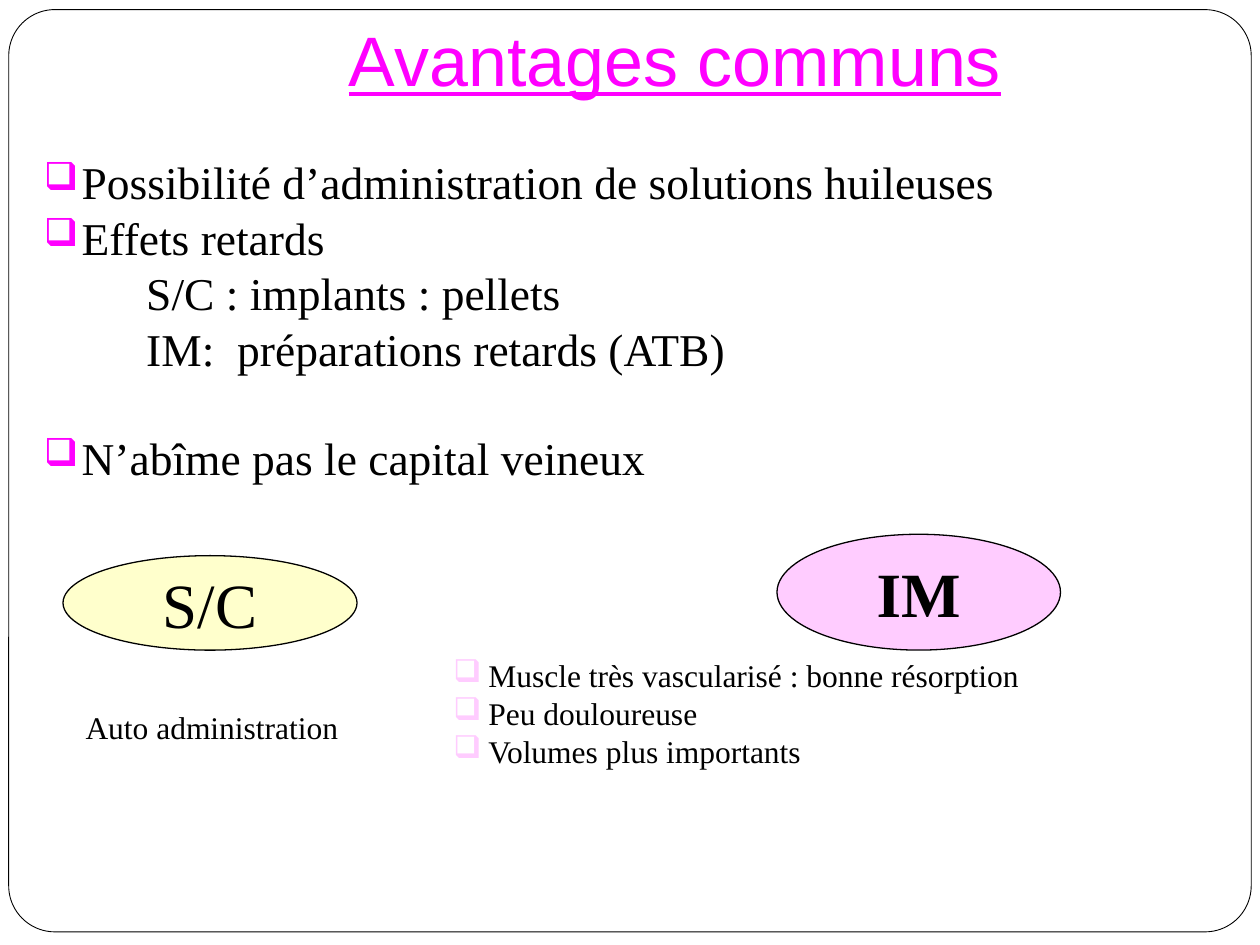
from lxml.etree import SubElement
from pptx import Presentation
from pptx.dml.color import RGBColor as Rgb
from pptx.enum.shapes import MSO_SHAPE as Kind
from pptx.enum.text import MSO_ANCHOR as Anchor, MSO_AUTO_SIZE as Fit, PP_ALIGN as Align
from pptx.oxml.ns import qn
from pptx.util import Pt

THEME = {
    "head": "Arial", "text": "Times New Roman",
    "title": 40, "body": 26, "oval": 36, "note": 18,
    "ink": "000000", "white": "FFFFFF", "pink": "FF00FF",
    "rose": "FFCCFF", "cream": "FFFFCC",
}

TITLE = "Avantages communs"
GAP, SKIP = 5.8, 36.5
POINTS = [
    ("Possibilité d’administration de solutions huileuses", True, GAP),
    ("Effets retards", True, GAP),
    ("S/C : implants : pellets", False, GAP),
    ("IM:  préparations retards (ATB)", False, GAP),
    ("N’abîme pas le capital veineux", True, SKIP),
]
OVALS = [
    ("S/C", (36, 317.5, 168, 54), "cream", False),
    ("IM", (444, 305.3, 162, 66.2), "rose", True),
]
SELF = "Auto administration"
GAINS = [
    "Muscle très vascularisé : bonne résorption",
    "Peu douloureuse",
    "Volumes plus importants",
]


def color(name):
    return Rgb.from_string(THEME[name])


def put(obj, vals):
    for key, val in vals.items():
        setattr(obj, key, val)


def place(shape, box):
    put(shape, dict(zip(("left", "top", "width", "height"), map(Pt, box))))


def write(para, text, size, face="text", tint="ink", **more):
    run = para.add_run()
    run.text = text
    put(run.font, {"name": THEME[face], "size": Pt(THEME[size]), **more})
    run.font.color.rgb = color(tint)


def indent(para, left, mark=None, scale=100):
    props = para._p.get_or_add_pPr()
    props.set("marL", str(Pt(left)))
    props.set("indent", str(-Pt(left) if mark else 0))
    if mark:
        tint = SubElement(props, qn("a:buClr"))
        SubElement(tint, qn("a:srgbClr"), val=THEME[mark])
        SubElement(props, qn("a:buSzPct"), val=str(scale * 1000))
        SubElement(props, qn("a:buChar"), char="❑")


def add_box(slide, box, wrap=True):
    frame = slide.shapes.add_textbox(*map(Pt, box)).text_frame
    frame.word_wrap = wrap
    return frame


def lines(frame, items):
    for i, item in enumerate(items):
        yield (frame.add_paragraph() if i else frame.paragraphs[0]), item


def add_form(slide, kind, box, fill, width):
    form = slide.shapes.add_shape(kind, *map(Pt, box))
    form.shadow.inherit = False
    form.fill.solid()
    form.fill.fore_color.rgb = color(fill)
    form.line.color.rgb = color("ink")
    form.line.width = Pt(width)
    return form


def main():
    deck = Presentation()
    put(deck, {"slide_width": Pt(720), "slide_height": Pt(540)})
    slide = deck.slides.add_slide(deck.slide_layouts[5])

    title = slide.shapes.title
    border = add_form(slide, Kind.ROUNDED_RECTANGLE, (5, 5.5, 710, 527), "white", 0.5)
    border.adjustments[0] = 0.05
    title.element.addprevious(border.element)

    place(title, (192.2, -18, 387.4, 82.8))
    put(title.text_frame, {"vertical_anchor": Anchor.BOTTOM, "margin_bottom": Pt(7.2),
                           "auto_size": Fit.NONE, "word_wrap": True})
    para = title.text_frame.paragraphs[0]
    para.alignment = Align.LEFT
    write(para, TITLE, "title", "head", "pink", underline=True)

    body = add_box(slide, (18, 90, 630.7, 426.2))
    for para, (text, mark, gap) in lines(body, POINTS):
        put(para, {"line_spacing": 0.83, "space_before": Pt(gap)})
        indent(para, 21.6 if mark else 58.5, "pink" if mark else None, 85)
        write(para, text, "body")

    for text, box, fill, bold in OVALS:
        frame = add_form(slide, Kind.OVAL, box, fill, 0.75).text_frame
        put(frame, {"word_wrap": False, "vertical_anchor": Anchor.MIDDLE})
        frame.paragraphs[0].alignment = Align.CENTER
        write(frame.paragraphs[0], text, "oval", bold=bold)

    label = add_box(slide, (41.8, 401, 175, 28.8), False)
    write(label.paragraphs[0], SELF, "note")

    gains = add_box(slide, (252, 371.5, 419.8, 72.7))
    for para, text in lines(gains, GAINS):
        indent(para, 20, "rose")
        write(para, text, "note")

    deck.save("out.pptx")


if __name__ == "__main__":
    main()
